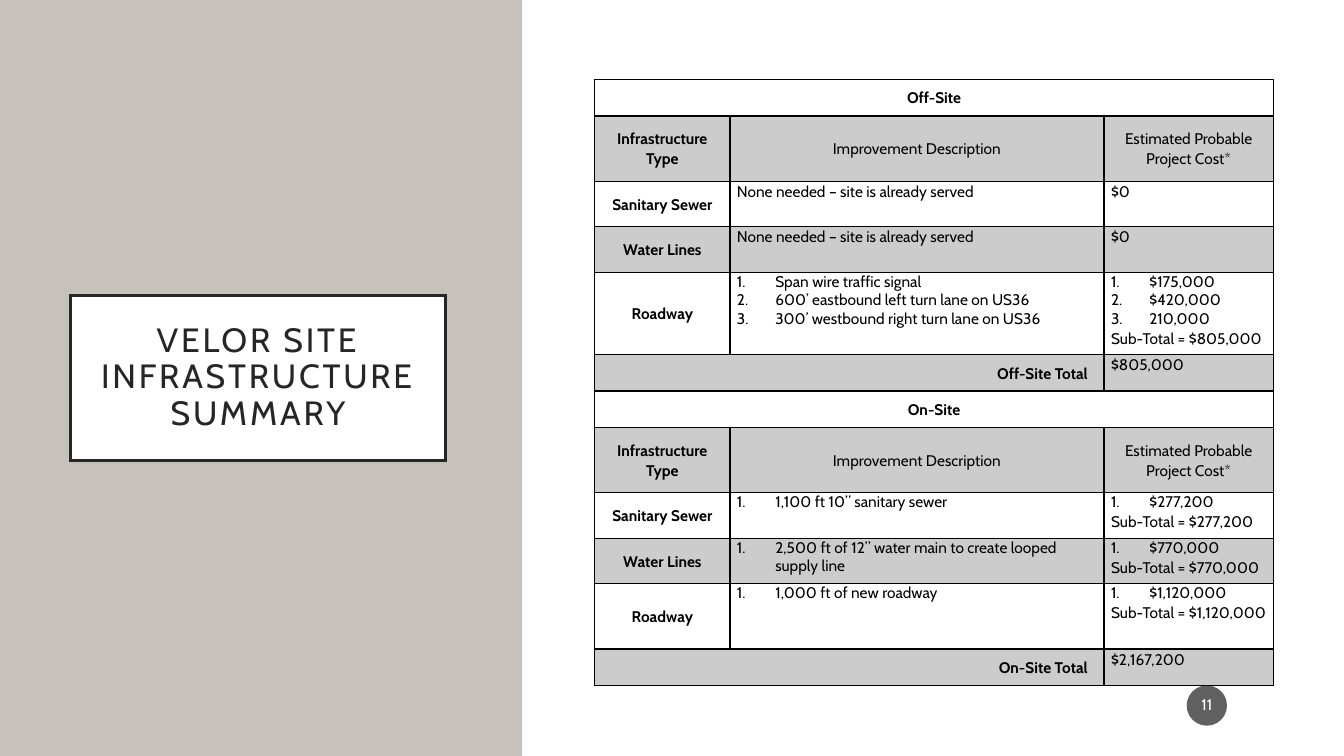
from pptx import Presentation
from pptx.dml.color import RGBColor
from pptx.enum.shapes import MSO_SHAPE
from pptx.enum.text import MSO_ANCHOR, PP_ALIGN
from pptx.oxml.ns import qn
from pptx.util import Inches, Pt
from lxml.etree import SubElement

TITLE = "VELOR SITE INFRASTRUCTURE SUMMARY"
PAGE = "11"
HEADS = ["Infrastructure Type", "Improvement Description",
         "Estimated Probable Project Cost*"]
NONE = "None needed – site is already served"
SITES = [
    ("Off-Site", [
        ("Sanitary Sewer", [], [NONE], [], ["$0"]),
        ("Water Lines", [], [NONE], [], ["$0"]),
        ("Roadway",
         ["Span wire traffic signal",
          "600’ eastbound left turn lane on US36",
          "300’ westbound right turn lane on US36"], [],
         ["$175,000", "$420,000", "210,000"], ["Sub-Total = $805,000"]),
    ], "$805,000"),
    ("On-Site", [
        ("Sanitary Sewer", ["1,100 ft 10” sanitary sewer"], [],
         ["$277,200"], ["Sub-Total = $277,200"]),
        ("Water Lines",
         ["2,500 ft of 12” water main to create looped supply line"], [],
         ["$770,000"], ["Sub-Total = $770,000"]),
        ("Roadway", ["1,000 ft of new roadway"], [],
         ["$1,120,000"], ["Sub-Total = $1,120,000"]),
    ], "$2,167,200"),
]
COLS = [1.34, 3.71, 1.68]
ROWS = [0.36, 0.65, 0.45, 0.45, 0.82, 0.36,
        0.36, 0.65, 0.45, 0.45, 0.65, 0.36]
LEFT, TOP = 5.9, 0.79

FONT = "Cabin"
TAUPE = RGBColor(0xC6, 0xC1, 0xBA)
WHITE = RGBColor(0xFF, 0xFF, 0xFF)
BLACK = RGBColor(0, 0, 0)
INK = RGBColor(0x26, 0x26, 0x26)
DARK = RGBColor(0x1D, 0x1D, 0x1D)
MID = MSO_ANCHOR.MIDDLE
CENTER, RIGHT = PP_ALIGN.CENTER, PP_ALIGN.RIGHT


def style(item, **vals):
    for key, val in vals.items():
        setattr(item, key, val)


def margins(item, side, end):
    style(item, margin_left=Inches(side), margin_right=Inches(side),
          margin_top=Inches(end), margin_bottom=Inches(end))


def paint(fill, color, alpha=100):
    fill.solid()
    fill.fore_color.rgb = color
    if alpha < 100:
        node = next(fill._xPr.iter(qn("a:srgbClr")))
        SubElement(node, qn("a:alpha"), val=str(alpha * 1000))


def write(para, text, size=11, color=BLACK, bold=False, **form):
    style(para, **form)
    run = para.add_run()
    run.text = text
    style(run.font, name=FONT, size=Pt(size), bold=bold)
    run.font.color.rgb = color
    return run


def add_box(slide, kind, place, color, alpha=100):
    box = slide.shapes.add_shape(kind, *map(Inches, place))
    box.shadow.inherit = False
    paint(box.fill, color, alpha)
    box.line.fill.background()
    style(box.text_frame, word_wrap=True, vertical_anchor=MID)
    return box


def number(para):
    props = para._p.get_or_add_pPr()
    props.set("marL", str(Inches(0.38)))
    props.set("indent", str(-Inches(0.38)))
    SubElement(props, qn("a:buFont"), typeface="+mj-lt")
    SubElement(props, qn("a:buAutoNum"), type="arabicPeriod")


def border(cell, base):
    props = cell._tc.get_or_add_tcPr()
    for spot, side in enumerate("LRTB"):
        width = base if side == "B" else 1
        line = SubElement(props, qn("a:ln" + side), w=str(Pt(width)))
        fill = SubElement(line, qn("a:solidFill"))
        SubElement(fill, qn("a:srgbClr"), val=str(BLACK))
        props.insert(spot, line)


def label(cell, text, bold=True, align=CENTER):
    cell.vertical_anchor = MID
    write(cell.text_frame.paragraphs[0], text, bold=bold, alignment=align,
          line_spacing=1.06, space_after=Pt(8))


def listing(cell, items, plain):
    frame = cell.text_frame
    for spot, text in enumerate(items + plain):
        para = frame.add_paragraph() if spot else frame.paragraphs[0]
        if spot < len(items):
            write(para, text)
            number(para)
        else:
            write(para, text, line_spacing=1.06, space_after=Pt(8))


def add_costs(slide):
    frame = slide.shapes.add_table(
        len(ROWS), len(COLS), Inches(LEFT), Inches(TOP),
        Inches(sum(COLS)), Inches(sum(ROWS)))
    table = frame.table
    style(table, first_row=False, horz_banding=False)
    for col, width in zip(table.columns, COLS):
        col.width = Inches(width)
    for row, height in zip(table.rows, ROWS):
        row.height = Inches(height)
    for r in range(len(ROWS)):
        for c in range(len(COLS)):
            cell = table.cell(r, c)
            margins(cell, 0.07, 0)
            if r % 2:
                paint(cell.fill, BLACK, 20)
            else:
                cell.fill.background()
            border(cell, 1 if r else 2)
    span = len(ROWS) // len(SITES)
    for part, (name, works, total) in enumerate(SITES):
        first = part * span
        last = first + span - 1
        wide = [(first, 2, name, CENTER),
                (last, 1, name + " Total", RIGHT)]
        for r, end, text, align in wide:
            cell = table.cell(r, 0)
            cell.merge(table.cell(r, end))
            margins(cell, 0.16, 0.08)
            label(cell, text, align=align)
        for c, text in enumerate(HEADS):
            label(table.cell(first + 1, c), text, bold=c == 0)
        for r, (kind, items, plain, costs, sub) in enumerate(works, first + 2):
            label(table.cell(r, 0), kind)
            listing(table.cell(r, 1), items, plain)
            listing(table.cell(r, 2), costs, sub)
        listing(table.cell(last, 2), [], [total])


def main():
    deck = Presentation()
    style(deck, slide_width=Inches(13.33), slide_height=Inches(7.5))
    slide = deck.slides.add_slide(deck.slide_layouts[6])
    rect = MSO_SHAPE.RECTANGLE
    add_box(slide, rect, (0, 0, 5.18, 7.5), TAUPE)
    add_box(slide, rect, (5.2, 0, 8.13, 7.5), WHITE)

    title = add_box(slide, rect, (0.7, 2.93, 3.72, 1.64), WHITE)
    title.line.color.rgb = INK
    title.line.width = Pt(2.5)
    SubElement(title.line._get_or_add_ln(), qn("a:miter"), lim="800000")
    margins(title.text_frame, 0.2, 0.2)
    run = write(title.text_frame.paragraphs[0], TITLE, 24, INK,
                alignment=CENTER, line_spacing=0.9)
    run.font._element.set("spc", "200")

    add_costs(slide)

    badge = add_box(slide, MSO_SHAPE.OVAL, (11.77, 6.8, 0.4, 0.4), DARK, 70)
    margins(badge.text_frame, 0.02, 0.05)
    write(badge.text_frame.paragraphs[0], PAGE, color=WHITE,
          alignment=CENTER, line_spacing=0.9)
    deck.save("out.pptx")


if __name__ == "__main__":
    main()
